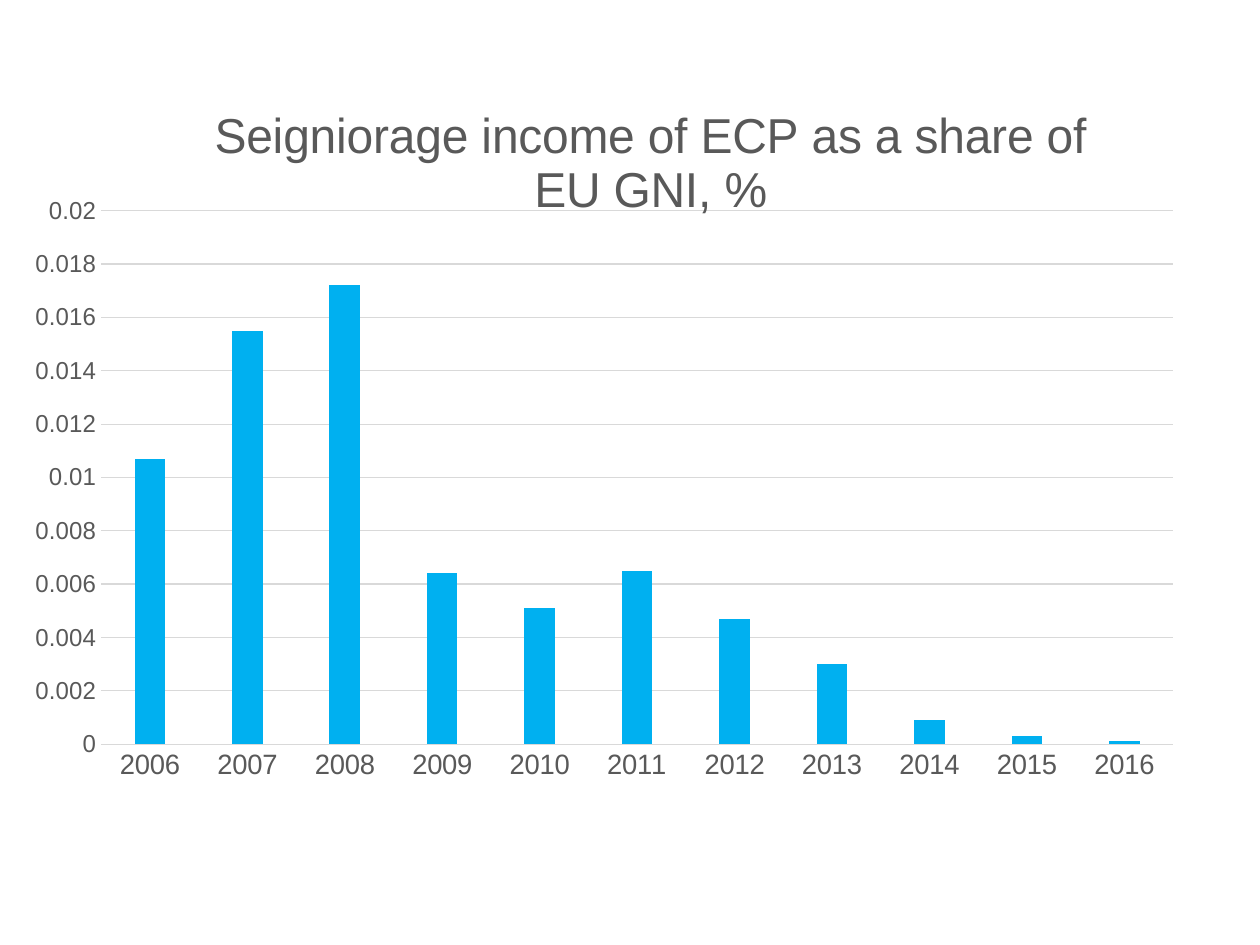
from lxml import etree
from pptx import Presentation
from pptx import util as u
from pptx.chart.data import CategoryChartData
from pptx.dml.color import RGBColor
from pptx.enum import chart as ch
from pptx.oxml import parse_xml
from pptx.oxml.ns import nsdecls

COLORS = {"text": "595959", "grid": "D9D9D9", "bar": "00B0F0"}
FONT = "Arial"
TITLE = "Seigniorage income of ECP as a share of EU GNI, %"
YEARS = [str(y) for y in range(2006, 2017)]
SHARES = [0.0107, 0.0155, 0.0172, 0.0064, 0.0051, 0.0065,
          0.0047, 0.003, 0.0009, 0.0003, 0.0001]


def rgb(name):
    return RGBColor.from_string(COLORS[name])


def set_attrs(obj, **values):
    for name, value in values.items():
        setattr(obj, name, value)


def format_font(font, size):
    set_attrs(font, name=FONT, size=u.Pt(size), bold=False)
    font.color.rgb = rgb("text")


def format_line(line):
    line.color.rgb = rgb("grid")
    line.width = u.Pt(0.75)


def manual_layout(target=None, **fractions):
    """Return a layout element with positions as fractions of the chart."""
    layout = parse_xml(f"<c:layout {nsdecls('c')}><c:manualLayout/></c:layout>")
    ns = layout.nsmap["c"]
    values = {"layoutTarget": target} if target else {}
    values.update({f"{key}Mode": "edge" for key in ("x", "y")})
    values.update(fractions)
    for name, value in values.items():
        etree.SubElement(layout[0], f"{{{ns}}}{name}").set("val", str(value))
    return layout


def replace_layout(parent, layout, index):
    for old in parent.findall(layout.tag):
        parent.remove(old)
    parent.insert(index, layout)


def add_title(chart):
    tf = chart.chart_title.text_frame
    tf.text = TITLE
    format_font(tf.paragraphs[0].runs[0].font, 28)
    chart.chart_title.include_in_layout = False
    # The layout follows the title text
    replace_layout(chart.chart_title._element, manual_layout(x=0.13, y=0.04), 1)


def format_axis(axis, size):
    set_attrs(axis, major_tick_mark=ch.XL_TICK_MARK.NONE,
              minor_tick_mark=ch.XL_TICK_MARK.NONE)
    format_font(axis.tick_labels.font, size)


def format_axes(chart):
    cat, val = chart.category_axis, chart.value_axis
    format_axis(cat, 16)
    format_line(cat.format.line)
    format_axis(val, 14)
    set_attrs(val, minimum_scale=0, maximum_scale=0.02, major_unit=0.002,
              has_major_gridlines=True)
    set_attrs(val.tick_labels, number_format="General",
              number_format_is_linked=False)
    val.format.line.fill.background()
    format_line(val.major_gridlines.format.line)


def add_column_chart(slide):
    data = CategoryChartData()
    data.categories = YEARS
    data.add_series("Series 1", SHARES)
    chart = slide.shapes.add_chart(
        ch.XL_CHART_TYPE.COLUMN_CLUSTERED, u.Cm(0.71), u.Cm(1.32),
        u.Cm(23.19), u.Cm(15.34), data).chart
    set_attrs(chart, has_legend=False, has_title=True)
    set_attrs(chart.font, name=FONT, size=u.Pt(10))

    # Columns
    plot = chart.plots[0]
    set_attrs(plot, gap_width=219, overlap=-27, vary_by_categories=False)
    fill = plot.series[0].format.fill
    fill.solid()
    fill.fore_color.rgb = rgb("bar")

    # Title, axes and plot area
    add_title(chart)
    format_axes(chart)
    plot_area = chart._chartSpace.chart.plotArea
    replace_layout(plot_area, manual_layout(
        "inner", x=0.037, y=0.191, w=0.952, h=0.701), 0)


def main():
    prs = Presentation()
    set_attrs(prs, slide_width=u.Cm(25.4), slide_height=u.Cm(19.05))
    s = prs.slides.add_slide(prs.slide_layouts[6])
    add_column_chart(s)
    prs.save("out.pptx")


if __name__ == "__main__":
    main()
